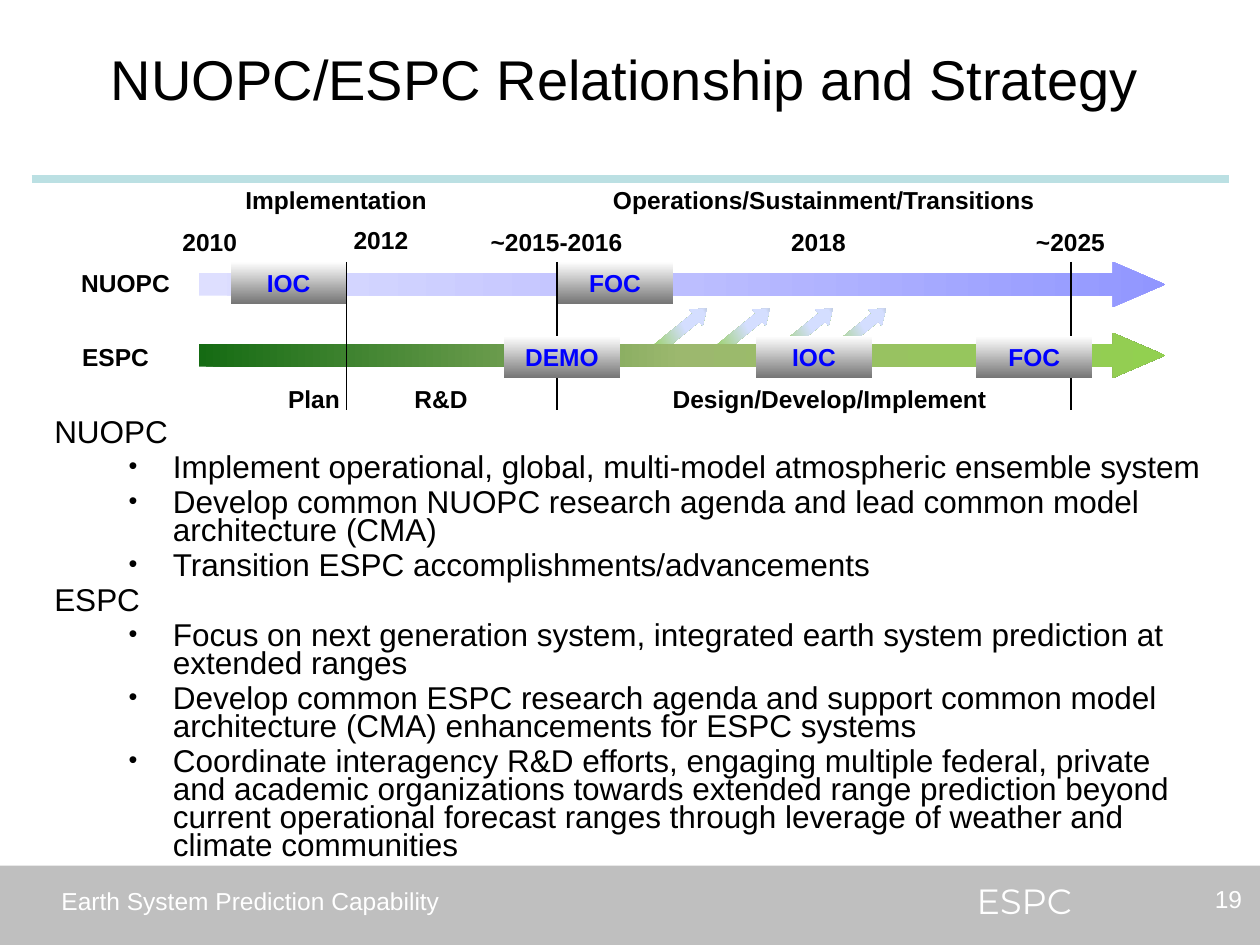
from lxml import etree
from pptx import Presentation
from pptx.dml.color import RGBColor
from pptx.enum.shapes import MSO_CONNECTOR, MSO_SHAPE
from pptx.enum.text import MSO_ANCHOR, MSO_AUTO_SIZE, PP_ALIGN
from pptx.oxml.ns import qn
from pptx.util import Cm, Pt

RECTANGLE, RIGHT_ARROW, UP_ARROW = MSO_SHAPE.RECTANGLE, MSO_SHAPE.RIGHT_ARROW, MSO_SHAPE.UP_ARROW
STRAIGHT = MSO_CONNECTOR.STRAIGHT
TOP, MIDDLE = MSO_ANCHOR.TOP, MSO_ANCHOR.MIDDLE
LEFT, CENTER = PP_ALIGN.LEFT, PP_ALIGN.CENTER
NO_AUTOFIT = MSO_AUTO_SIZE.NONE


def write(paragraph, text, size=14, color="000000", bold=False, font="Arial", align=CENTER):
    paragraph.alignment = align
    run = paragraph.add_run()
    run.text = text
    run.font.name = font
    run.font.size = Pt(size)
    run.font.bold = bold
    run.font.color.rgb = RGBColor.from_string(color)


def paint(shape, stops, angle=0):
    """Fill with a gradient of (percent, colour) stops, angle clockwise; no line or shadow."""
    shape.shadow.inherit = False
    shape.line.fill.background()
    shape.fill.gradient()
    gradient = shape.fill._xPr.find(qn("a:gradFill"))
    stop_list = gradient.find(qn("a:gsLst"))
    for old_stop in list(stop_list):
        stop_list.remove(old_stop)
    for percent, color in stops:
        stop = etree.SubElement(stop_list, qn("a:gs"), pos=str(percent * 1000))
        etree.SubElement(stop, qn("a:srgbClr"), val=color)
    gradient.find(qn("a:lin")).set("ang", str(angle * 60000))


presentation = Presentation()
presentation.slide_width, presentation.slide_height = Cm(25.4), Cm(19.05)
slide = presentation.slides.add_slide(presentation.slide_layouts[1])
shapes = slide.shapes

# Title and list
title, body = shapes.title, slide.placeholders[1]
for placeholder, left, top, width, height in [
    (title, 1.07, 0.64, 23.06, 2.54),
    (body, 0.84, 8.26, 23.7, 8.26),
]:
    placeholder.left, placeholder.top = Cm(left), Cm(top)
    placeholder.width, placeholder.height = Cm(width), Cm(height)
    frame = placeholder.text_frame
    frame.auto_size = NO_AUTOFIT
    frame.vertical_anchor = TOP
    frame.margin_top = Cm(0.25)

title.fill.solid()
title.fill.fore_color.rgb = RGBColor.from_string("FFFFFF")
write(title.text_frame.paragraphs[0], "NUOPC/ESPC Relationship and Strategy", size=32)

items = [
    (0, "NUOPC"),
    (1, "Implement operational, global, multi-model atmospheric ensemble system"),
    (1, "Develop common NUOPC research agenda and lead common model architecture (CMA)"),
    (1, "Transition ESPC accomplishments/advancements"),
    (0, "ESPC"),
    (1, "Focus on next generation system, integrated earth system prediction at extended ranges"),
    (1, "Develop common ESPC research agenda and support common model architecture (CMA) "
        "enhancements for ESPC systems"),
    (1, "Coordinate interagency R&D efforts, engaging multiple federal, private and academic "
        "organizations towards extended range prediction beyond current operational forecast "
        "ranges through leverage of weather and climate communities"),
]
for index, (level, text) in enumerate(items):
    frame = body.text_frame
    paragraph = frame.add_paragraph() if index else frame.paragraphs[0]
    paragraph.level = level
    paragraph.line_spacing = Pt(16)
    paragraph.space_before, paragraph.space_after = Pt(0), Pt(4)
    write(paragraph, text, size=18, align=LEFT)
    properties = paragraph._p.get_or_add_pPr()
    margin, indent = (Cm(2.39), Cm(-0.89)) if level else (Cm(1.27), Cm(-1.27))
    properties.set("marL", str(margin))
    properties.set("indent", str(indent))
    if level:
        bullet_color = etree.SubElement(properties, qn("a:buClr"))
        etree.SubElement(bullet_color, qn("a:srgbClr"), val="000000")
        etree.SubElement(properties, qn("a:buSzPct"), val="80000")
        etree.SubElement(properties, qn("a:buChar"), char="•")
    else:
        etree.SubElement(properties, qn("a:buNone"))

# Footer
band = shapes.add_shape(RECTANGLE, Cm(0), Cm(17.45), Cm(25.4), Cm(1.6))
band.shadow.inherit = False
band.fill.solid()
band.fill.fore_color.rgb = RGBColor.from_string("BFBFBF")
band.line.fill.background()
for text, left, top, width, size, font, align in [
    ("Earth System Prediction Capability", 1.24, 17.86, 15.72, 14, "Arial", LEFT),
    ("ESPC", 18.62, 17.73, 4.06, 20, "Montserrat", CENTER),
    ("19", 24.13, 17.83, 1.27, 14, "Arial", CENTER),
]:
    box = shapes.add_textbox(Cm(left), Cm(top), Cm(width), Cm(0.9))
    frame = box.text_frame
    frame.word_wrap = True
    frame.margin_left = frame.margin_right = frame.margin_top = frame.margin_bottom = 0
    write(frame.paragraphs[0], text, size=size, color="FFFFFF", font=font, align=align)

# Timeline labels
for text, left, top, width in [
    ("NUOPC", 0.84, 5.28, 3.38),
    ("ESPC", 0.64, 6.78, 3.38),
    ("Implementation", 4.4, 3.61, 4.75),
    ("Operations/Sustainment/Transitions", 11.43, 3.61, 10.36),
    ("2010", 2.54, 4.45, 3.38),
    ("2012", 5.99, 4.42, 3.38),
    ("~2015-2016", 9.53, 4.45, 3.38),
    ("2018", 14.81, 4.45, 3.38),
    ("~2025", 19.89, 4.45, 3.38),
    ("Plan", 4.64, 7.62, 3.38),
    ("R&D", 7.2, 7.62, 3.38),
    ("Design/Develop/Implement", 12.7, 7.62, 8.05),
]:
    label = shapes.add_textbox(Cm(left), Cm(top), Cm(width), Cm(0.84))
    label.text_frame.word_wrap = True
    label.text_frame.vertical_anchor = MIDDLE
    write(label.text_frame.paragraphs[0], text, bold=True)

# Timeline arrows, with the transition arrows between them
nuopc_stops = [(0, "DEDFFF"), (50, "BCBEFF"), (100, "9196FF")]
espc_stops = [(0, "156B13"), (50, "9CB86E"), (100, "92D050")]
transition_stops = [(0, "92D050"), (53, "D4DEFF"), (83, "D4DEFF"), (100, "96AB94")]
arrows = [(RIGHT_ARROW, 4.01, 5.28, 19.48, 0.91, 1.16, 0, nuopc_stops, 0)]
arrows += [(UP_ARROW, left, 5.99, 0.43, 1.27, 0.66, 50.9, transition_stops, 280)
           for left in (13.54, 14.81, 16.08, 17.15)]
arrows += [(RIGHT_ARROW, 4.01, 6.71, 19.48, 0.91, 1.16, 0, espc_stops, 0)]
for kind, left, top, width, height, head, rotation, stops, angle in arrows:
    arrow = shapes.add_shape(kind, Cm(left), Cm(top), Cm(width), Cm(height))
    arrow.adjustments[0], arrow.adjustments[1] = 0.5, head
    arrow.rotation = rotation
    paint(arrow, stops, angle)

# Milestones
for text, left, top in [
    ("IOC", 4.65, 5.28),
    ("FOC", 11.23, 5.28),
    ("DEMO", 10.16, 6.78),
    ("IOC", 15.24, 6.78),
    ("FOC", 19.68, 6.78),
]:
    if text == "DEMO":
        # The lines lie above the NUOPC milestones and below the ESPC ones
        for start_x, start_y, end_x, end_y, color, weight in [
            (0.64, 3.61, 24.77, 3.61, "BBE0E3", 4.5),
            (6.99, 5.28, 6.99, 8.26, "000000", 0.75),
            (11.23, 5.28, 11.23, 8.26, "000000", 0.75),
            (21.59, 5.28, 21.59, 8.26, "000000", 0.75),
        ]:
            line = shapes.add_connector(STRAIGHT, Cm(start_x), Cm(start_y), Cm(end_x), Cm(end_y))
            line.line.color.rgb = RGBColor.from_string(color)
            line.line.width = Pt(weight)
            etree.SubElement(line._element.spPr, qn("a:effectLst"))
    milestone = shapes.add_shape(RECTANGLE, Cm(left), Cm(top), Cm(2.34), Cm(0.84))
    paint(milestone, [(0, "FFFFFF"), (100, "767676")], 90)
    milestone.text_frame.vertical_anchor = MIDDLE
    write(milestone.text_frame.paragraphs[0], text, color="0000FF", bold=True)

presentation.save("out.pptx")
